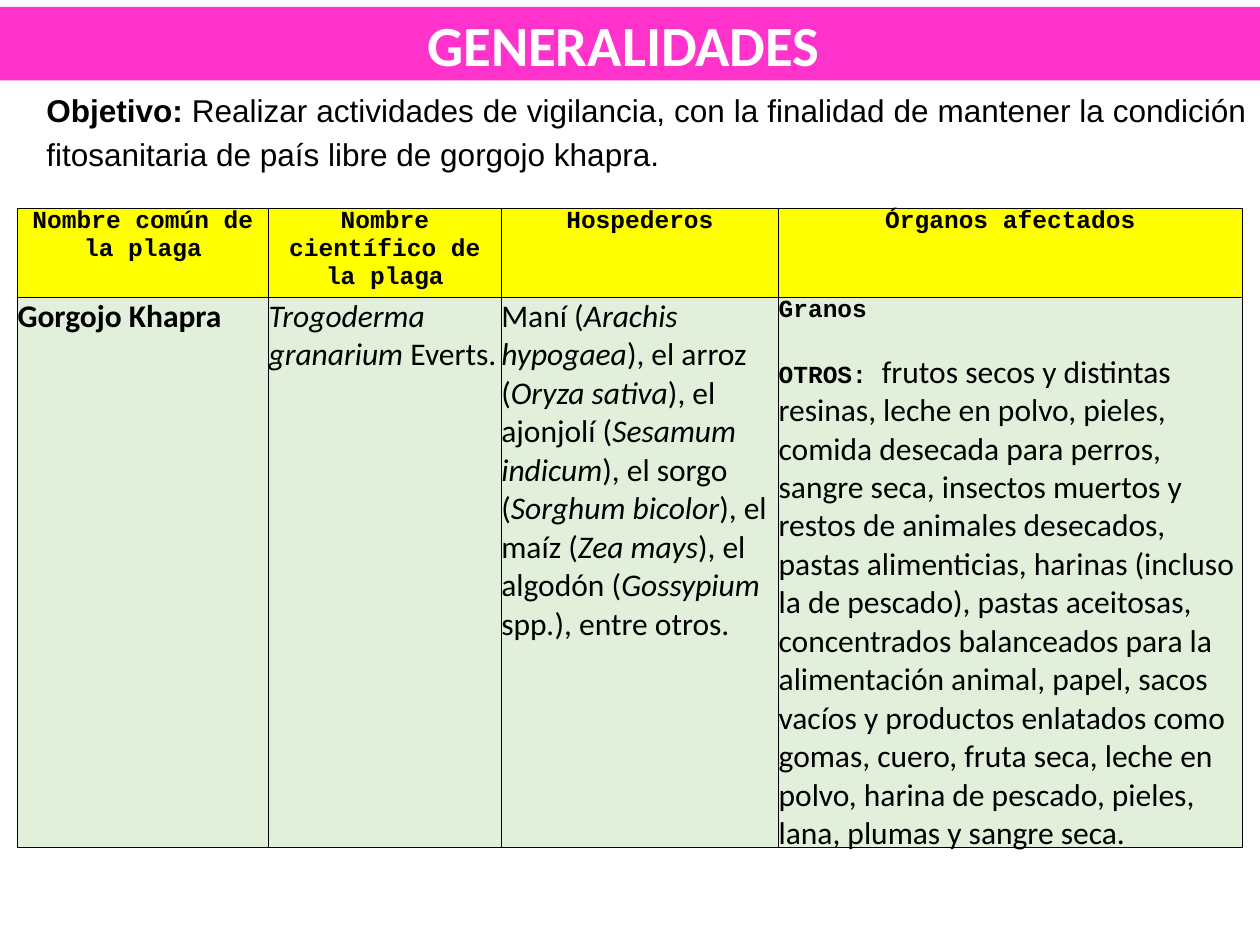
from lxml import etree
from pptx import Presentation
from pptx.dml.color import RGBColor
from pptx.enum import text as t
from pptx.oxml.ns import qn
from pptx.util import Pt

BLACK, WHITE, PINK, YELLOW, GREEN = "000000", "FFFFFF", "FF33CC", "FFFF00", "E2EFDA"

COLUMN_WIDTHS = [143.5, 133, 158.5, 265]
HEADER_HEIGHT, BODY_HEIGHT = 51, 314
HEADERS = ["Nombre común de la plaga", "Nombre científico de la plaga",
           "Hospederos", "Órganos afectados"]
SCIENTIFIC_NAME = "*Trogoderma granarium *Everts."
HOSTS = ("Maní (*Arachis hypogaea*), el arroz (*Oryza sativa*), el ajonjolí "
         "(*Sesamum indicum*), el sorgo (*Sorghum bicolor*), el maíz (*Zea mays*), "
         "el algodón (*Gossypium *spp*.*), entre otros.")
OTHER_PRODUCTS = (
    "frutos secos y distintas resinas, leche en polvo, pieles, comida desecada para "
    "perros, sangre seca, insectos muertos y restos de animales desecados, pastas "
    "alimenticias, harinas (incluso la de pescado), pastas aceitosas, concentrados "
    "balanceados para la alimentación animal, papel, sacos vacíos y productos enlatados "
    "como gomas, cuero, fruta seca, leche en polvo, harina de pescado, pieles, lana, "
    "plumas y sangre seca.")


def color(hex_string):
    """Turn a hex string into a colour."""
    return RGBColor.from_string(hex_string)


def paint(target, hex_string):
    """Give a shape or cell a solid fill."""
    target.fill.solid()
    target.fill.fore_color.rgb = color(hex_string)


def write(paragraph, content, font="Calibri", size=18, bold=False, ink=BLACK):
    """Append text to a paragraph, setting parts between asterisks in italics."""
    for index, part in enumerate(content.split("*")):
        if part:
            run = paragraph.add_run()
            run.text = part
            run.font.name, run.font.size = font, Pt(size)
            run.font.bold, run.font.italic = bold, index % 2 == 1
            run.font.color.rgb = color(ink)


def add_border(cell):
    """Draw thin black lines on all four sides of a cell."""
    properties = cell._tc.get_or_add_tcPr()
    for position, side in enumerate(("a:lnL", "a:lnR", "a:lnT", "a:lnB")):
        line = etree.Element(qn(side), w=str(Pt(0.5)))
        fill = etree.SubElement(line, qn("a:solidFill"))
        etree.SubElement(fill, qn("a:srgbClr"), val=BLACK)
        properties.insert(position, line)


def place_title(slide, left, top, width, height):
    """Format the title as a full-width banner."""
    title = slide.shapes.title
    title.left, title.top, title.width, title.height = map(Pt, (left, top, width, height))
    paint(title, PINK)
    frame = title.text_frame
    frame.auto_size = t.MSO_AUTO_SIZE.NONE
    frame.vertical_anchor = t.MSO_ANCHOR.MIDDLE
    paragraph = frame.paragraphs[0]
    paragraph.alignment = t.PP_ALIGN.CENTER
    paragraph.line_spacing = 1.0
    write(paragraph, "GENERALIDADES ", size=32.4, bold=True, ink=WHITE)


def add_objective(slide, left, top, width, height):
    """Add the paragraph that states the objective."""
    box = slide.shapes.add_textbox(*map(Pt, (left, top, width, height)))
    frame = box.text_frame
    frame.word_wrap = True
    paragraph = frame.paragraphs[0]
    paragraph.alignment = t.PP_ALIGN.JUSTIFY
    paragraph.line_spacing = 1.15
    write(paragraph, "Objetivo: ", font="Arial", bold=True)
    write(paragraph, "Realizar actividades de vigilancia, con la finalidad de mantener la "
          "condición fitosanitaria de país libre de gorgojo khapra.", font="Arial")


def add_pest_table(slide, left, top):
    """Add the table of the pest, its hosts and the affected organs."""
    label = {"font": "Courier New", "size": 14, "bold": True}
    table = slide.shapes.add_table(
        2, len(HEADERS), Pt(left), Pt(top), Pt(sum(COLUMN_WIDTHS)),
        Pt(HEADER_HEIGHT + BODY_HEIGHT)).table
    for column, width in zip(table.columns, COLUMN_WIDTHS):
        column.width = Pt(width)
    for row, height, fill in zip(table.rows, (HEADER_HEIGHT, BODY_HEIGHT), (YELLOW, GREEN)):
        row.height = Pt(height)
        for cell in row.cells:
            cell.margin_left = cell.margin_right = cell.margin_top = cell.margin_bottom = 0
            paint(cell, fill)
            add_border(cell)

    for cell, header in zip(table.rows[0].cells, HEADERS):
        paragraph = cell.text_frame.paragraphs[0]
        paragraph.alignment = t.PP_ALIGN.CENTER
        write(paragraph, header, **label)

    pest, scientific, hosts, organs = [cell.text_frame for cell in table.rows[1].cells]
    write(pest.paragraphs[0], "Gorgojo Khapra", bold=True)
    write(scientific.paragraphs[0], SCIENTIFIC_NAME)
    write(hosts.paragraphs[0], HOSTS)
    write(organs.paragraphs[0], "Granos", **label)
    others = organs.add_paragraph()
    others.space_before = Pt(16)
    write(others, "OTROS: ", **label)
    write(others, OTHER_PRODUCTS)


def main():
    """Build and save the slide."""
    presentation = Presentation()
    presentation.slide_width, presentation.slide_height = Pt(720), Pt(540)
    slide = presentation.slides.add_slide(presentation.slide_layouts[5])
    place_title(slide, 0, 4, 720, 42)
    add_objective(slide, 19.5, 45.5, 700, 80.5)
    add_pest_table(slide, 10, 119)
    presentation.save("out.pptx")


if __name__ == "__main__":
    main()
